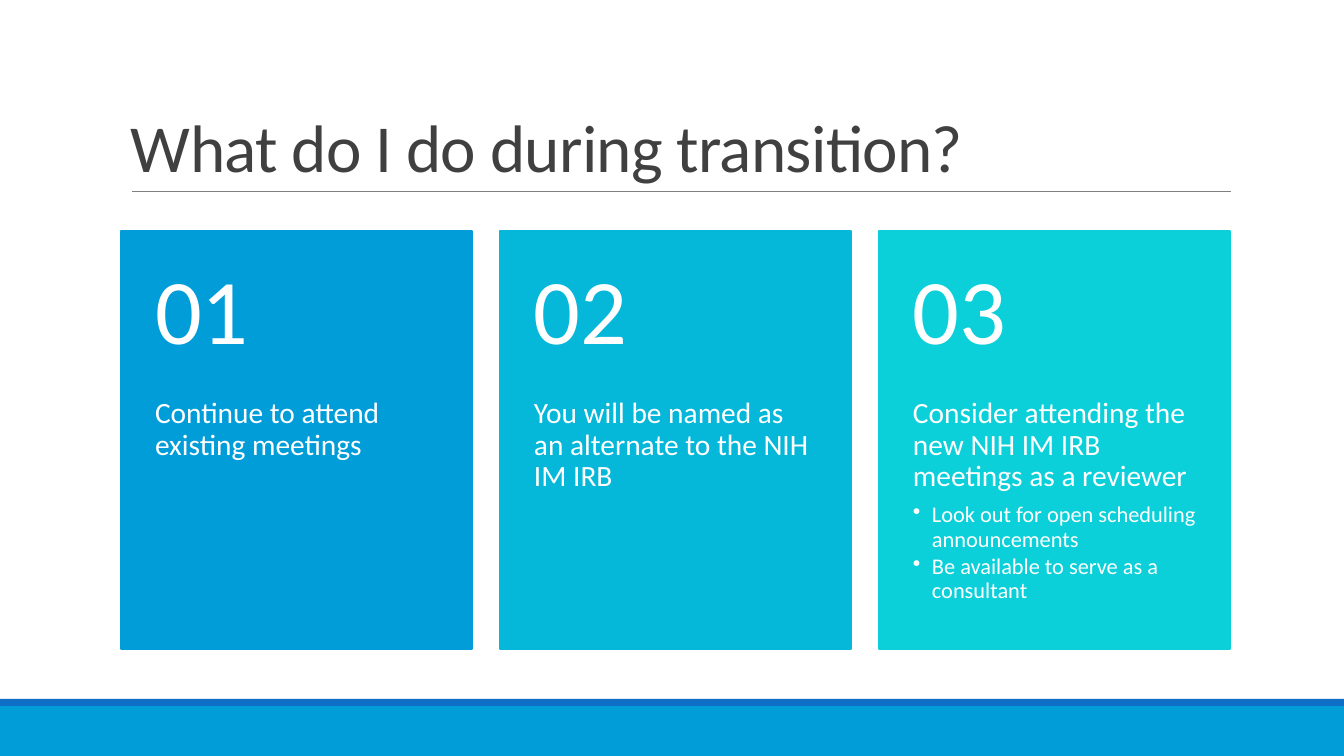
"""Build the slide on what to do during the transition."""
from lxml.etree import SubElement
from pptx import Presentation
from pptx.dml.color import RGBColor
from pptx.enum.shapes import MSO_CONNECTOR, MSO_SHAPE
from pptx.enum.text import MSO_ANCHOR
from pptx.oxml.ns import qn
from pptx.util import Pt

TITLE = "What do I do during transition?"
CARDS = [
    ("01", "Continue to attend existing meetings", []),
    ("02", "You will be named as an alternate to the NIH IM IRB", []),
    ("03", "Consider attending the new NIH IM IRB meetings as a reviewer",
     ["Look out for open scheduling announcements",
      "Be available to serve as a consultant"]),
]


class Theme:
    """Hold the font, colours and type sizes."""
    font = "Calibri"
    title, white, rule = "404040", "FFFFFF", "808080"
    cards = ["009DD9", "05B7D9", "0BD0D9"]
    footer, stripe = "009DD9", "0F6FC6"
    title_size, number_size, body_size, bullet_size = 48, 66, 21, 16


SLIDE_WIDTH, SLIDE_HEIGHT = 1344, 756
STRIPE_TOP, FOOTER_TOP = 699, 706
TITLE_BOX = (121, 31, 1109, 160)
RULE_LEFT, RULE_RIGHT, RULE_TOP = 132, 1231, 191
CARD_LEFT, CARD_TOP, CARD_WIDTH, CARD_HEIGHT = 121, 231, 351, 418
CARD_PITCH, NUMBER_HEIGHT, BULLET_INDENT = 379, 167, 19


def px(length):
    """Turn pixels into EMU."""
    return round(length * 914400 / 100.8)


def color(value):
    """Turn a hex string into a colour."""
    return RGBColor.from_string(value)


def add_rectangle(page, area, fill, line_width=0):
    """Draw a filled rectangle, outlined in its own colour if asked."""
    box = page.shapes.add_shape(MSO_SHAPE.RECTANGLE, *map(px, area))
    box.shadow.inherit = False
    box.fill.solid()
    box.fill.fore_color.rgb = color(fill)
    if line_width:
        box.line.color.rgb = color(fill)
        box.line.width = Pt(line_width)
    else:
        box.line.fill.background()


def add_rule(page):
    """Draw the thin line under the title."""
    rule = page.shapes.add_connector(
        MSO_CONNECTOR.STRAIGHT, px(RULE_LEFT), px(RULE_TOP), px(RULE_RIGHT), px(RULE_TOP))
    rule.line.color.rgb = color(Theme.rule)
    rule.line.width = Pt(0.5)
    SubElement(rule._element.spPr, qn("a:effectLst"))


def add_text_box(page, area, margins, anchor=MSO_ANCHOR.TOP):
    """Add a wrapping text box and return its frame."""
    frame = page.shapes.add_textbox(*map(px, area)).text_frame
    sides = ("margin_left", "margin_top", "margin_right", "margin_bottom")
    settings = dict(zip(sides, map(px, margins)), word_wrap=True, vertical_anchor=anchor)
    for name, value in settings.items():
        setattr(frame, name, value)
    return frame


def write(para, text, size, ink=Theme.white, spacing=0.9, after=0.35):
    """Fill a paragraph with one formatted span and return the span."""
    for name, value in {"line_spacing": spacing, "space_after": Pt(size * after)}.items():
        setattr(para, name, value)
    span = para.add_run()
    span.text = text
    for name, value in {"name": Theme.font, "size": Pt(size)}.items():
        setattr(span.font, name, value)
    span.font.color.rgb = color(ink)
    return span


def add_bullet(para):
    """Give a paragraph a hanging bullet."""
    properties = para._p.get_or_add_pPr()
    for name, value in {"marL": px(BULLET_INDENT), "indent": -px(BULLET_INDENT)}.items():
        properties.set(name, str(value))
    SubElement(properties, qn("a:buChar")).set("char", "•")


def add_card(page, left, fill, number, body, bullets):
    """Draw one numbered card."""
    add_rectangle(page, (left, CARD_TOP, CARD_WIDTH, CARD_HEIGHT), fill, 1.25)
    body_area = (left, CARD_TOP + NUMBER_HEIGHT, CARD_WIDTH, CARD_HEIGHT - NUMBER_HEIGHT)
    frame = add_text_box(page, body_area, (34, 0, 34, 36))
    write(frame.paragraphs[0], body, Theme.body_size)
    for bullet in bullets:
        para = frame.add_paragraph()
        write(para, bullet, Theme.bullet_size, after=0.15)
        add_bullet(para)
    number_area = (left, CARD_TOP, CARD_WIDTH, NUMBER_HEIGHT)
    frame = add_text_box(page, number_area, (34, 18, 34, 18), MSO_ANCHOR.MIDDLE)
    write(frame.paragraphs[0], number, Theme.number_size)


def main():
    """Build and save the deck."""
    deck = Presentation()
    deck.slide_width, deck.slide_height = px(SLIDE_WIDTH), px(SLIDE_HEIGHT)
    page = deck.slides.add_slide(deck.slide_layouts[6])
    add_rectangle(page, (0, FOOTER_TOP, SLIDE_WIDTH, SLIDE_HEIGHT - FOOTER_TOP), Theme.footer)
    add_rectangle(page, (0, STRIPE_TOP, SLIDE_WIDTH, FOOTER_TOP - STRIPE_TOP), Theme.stripe)
    add_rule(page)
    frame = add_text_box(page, TITLE_BOX, (10, 5, 10, 5), MSO_ANCHOR.BOTTOM)
    span = write(frame.paragraphs[0], TITLE, Theme.title_size, Theme.title, 0.85, 0)
    span.font._element.set("spc", "-50")
    for index, (fill, card) in enumerate(zip(Theme.cards, CARDS)):
        add_card(page, CARD_LEFT + index * CARD_PITCH, fill, *card)
    deck.save("out.pptx")


if __name__ == "__main__":
    main()
